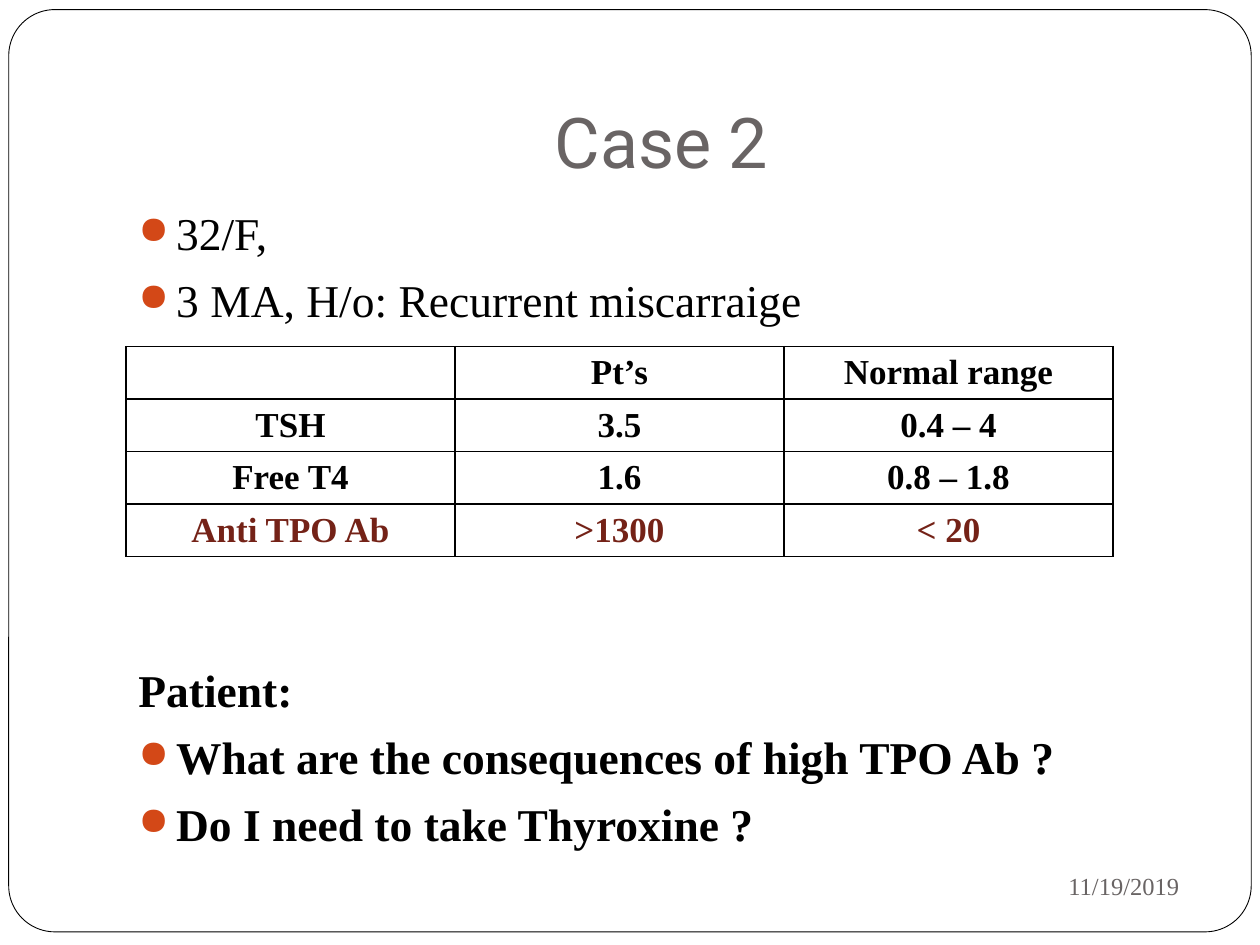
from lxml import etree
from pptx import Presentation
from pptx.dml.color import RGBColor
from pptx.enum.shapes import MSO_SHAPE as SHAPE
from pptx.enum.text import MSO_ANCHOR as ANCHOR, PP_ALIGN as ALIGN
from pptx.oxml.ns import qn
from pptx.util import Pt

COLORS = {"white": "FFFFFF", "black": "000000", "grey": "696464",
          "bullet": "D34817", "alert": "742217"}
SERIF = "Times New Roman"

HISTORY = ["32/F,", "3 MA, H/o: Recurrent miscarraige"]
QUESTIONS = ["What are the consequences of high TPO Ab ?",
             "Do I need to take Thyroxine ?"]
LAB_ROWS = [["", "Pt’s", "Normal range"],
            ["TSH", "3.5", "0.4 – 4"],
            ["Free T4", "1.6", "0.8 – 1.8"],
            ["Anti TPO Ab", ">1300", "< 20"]]


def rgb(name):
    return RGBColor.from_string(COLORS[name])


def write(para, text, size=26, font=SERIF, color="black", bold=False,
          align=ALIGN.LEFT, before=0):
    para.alignment = align
    para.space_before = Pt(before)
    span = para.add_run()
    span.text = text
    span.font.size = Pt(size)
    span.font.name = font
    span.font.bold = bold
    span.font.color.rgb = rgb(color)


def add_bullet(para):
    props = para._p.get_or_add_pPr()
    props.set("marL", str(Pt(21.6)))
    props.set("indent", str(Pt(-21.6)))
    color = etree.SubElement(props, qn("a:buClr"))
    etree.SubElement(color, qn("a:srgbClr"), val=COLORS["bullet"])
    etree.SubElement(props, qn("a:buSzPct"), val="85000")
    etree.SubElement(props, qn("a:buChar"), char="●")


def add_text_frame(page, left, top, width, height, anchor=ANCHOR.TOP):
    box = page.shapes.add_textbox(Pt(left), Pt(top), Pt(width), Pt(height))
    frame = box.text_frame
    frame.word_wrap = True
    frame.vertical_anchor = anchor
    return frame


def add_border(page, left, top, width, height):
    border = page.shapes.add_shape(SHAPE.ROUNDED_RECTANGLE, Pt(left), Pt(top),
                                   Pt(width), Pt(height))
    border.adjustments[0] = 0.05
    border.shadow.inherit = False
    border.fill.solid()
    border.fill.fore_color.rgb = rgb("white")
    border.line.color.rgb = rgb("black")
    border.line.width = Pt(0.5)


def add_title(page, left, top, width, height):
    frame = add_text_frame(page, left, top, width, height, ANCHOR.BOTTOM)
    frame.margin_bottom = Pt(7.2)
    write(frame.paragraphs[0], "Case 2", size=40, font="Roboto",
          color="grey", align=ALIGN.CENTER)


def add_date(page, left, top, width, height):
    frame = add_text_frame(page, left, top, width, height, ANCHOR.MIDDLE)
    write(frame.paragraphs[0], "11/19/2019", size=14, color="grey",
          align=ALIGN.RIGHT)


def add_body(page, left, top, width, height):
    """Place history above and the patient's questions below the table gap."""
    frame = add_text_frame(page, left, top, width, height)
    lines = ([(text, False, True, 7) for text in HISTORY]
             + [("Patient:", True, False, 191.8)]
             + [(text, True, True, 7) for text in QUESTIONS])
    for index, (text, bold, bulleted, before) in enumerate(lines):
        para = frame.add_paragraph() if index else frame.paragraphs[0]
        write(para, text, bold=bold, before=before)
        if bulleted:
            add_bullet(para)


def add_cell_borders(cell):
    props = cell._tc.get_or_add_tcPr()
    for position, side in enumerate(("lnL", "lnR", "lnT", "lnB")):
        line = etree.Element(qn(f"a:{side}"), w=str(Pt(1)))
        fill = etree.SubElement(line, qn("a:solidFill"))
        etree.SubElement(fill, qn("a:srgbClr"), val=COLORS["black"])
        props.insert(position, line)


def add_lab_table(page, left, top, width, height):
    table = page.shapes.add_table(len(LAB_ROWS), len(LAB_ROWS[0]), Pt(left),
                                  Pt(top), Pt(width), Pt(height)).table
    for row_index, values in enumerate(LAB_ROWS):
        color = "alert" if values[0] == "Anti TPO Ab" else "black"
        for column_index, value in enumerate(values):
            cell = table.cell(row_index, column_index)
            cell.margin_top = cell.margin_bottom = Pt(3)
            cell.vertical_anchor = ANCHOR.MIDDLE
            cell.fill.background()
            add_cell_borders(cell)
            if value:
                write(cell.text_frame.paragraphs[0], value, size=20,
                      color=color, bold=True, align=ALIGN.CENTER)


def main():
    deck = Presentation()
    deck.slide_width, deck.slide_height = Pt(720), Pt(540)
    page = deck.slides.add_slide(deck.slide_layouts[6])
    add_border(page, 5, 5.5, 710, 527)
    add_title(page, 72, 21.6, 612, 90)
    add_date(page, 486, 487.5, 195, 37.5)
    add_body(page, 72, 113.8, 612, 360)
    add_lab_table(page, 72, 198, 564, 117.6)
    deck.save("out.pptx")


if __name__ == "__main__":
    main()
